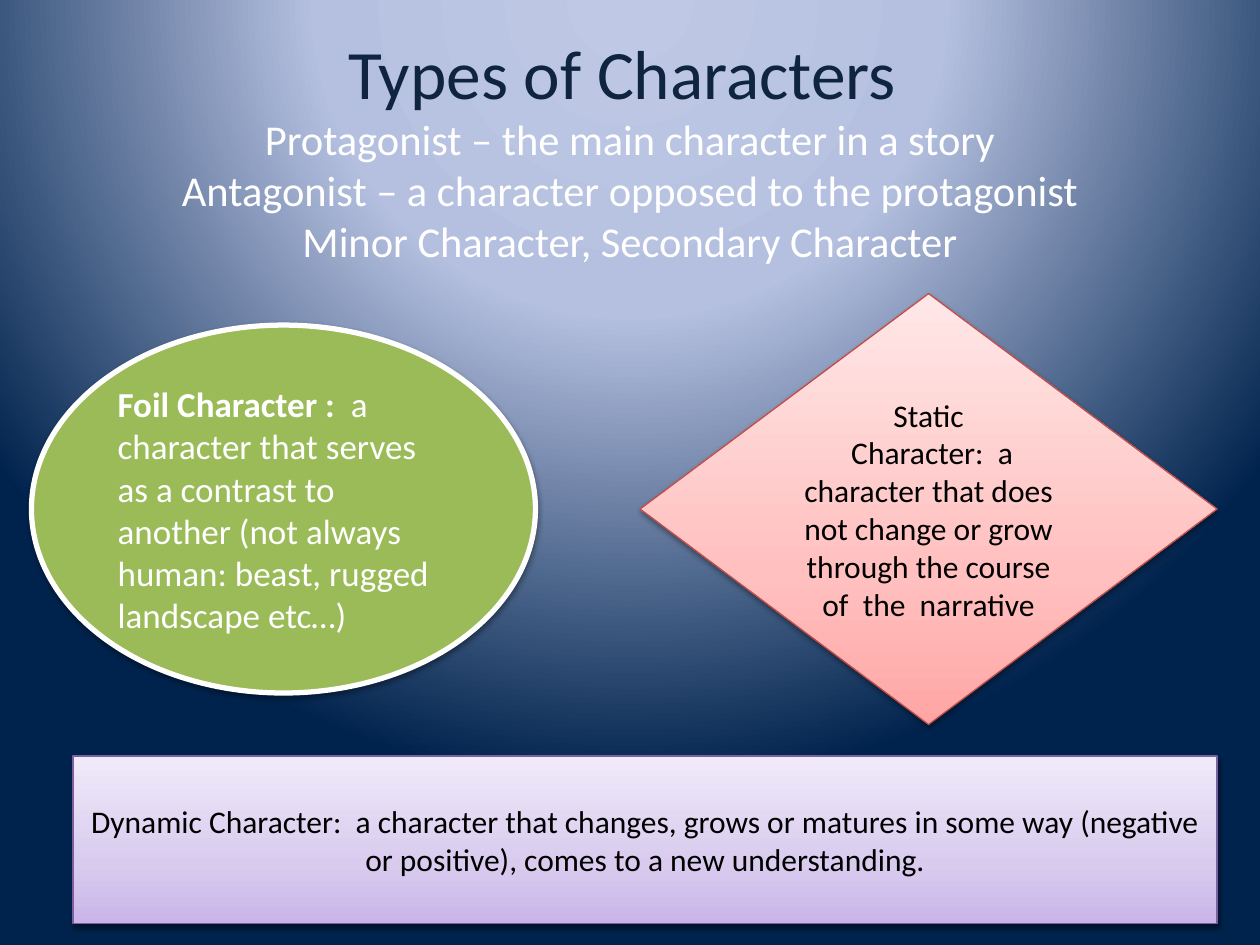
"""Build the slide on types of characters."""
from dataclasses import dataclass
from typing import NamedTuple

from pptx import Presentation
from pptx.dml.color import RGBColor as Rgb
from pptx.enum.shapes import MSO_SHAPE as Form
from pptx.enum.text import MSO_ANCHOR as Anchor, PP_ALIGN as Align
from pptx.oxml import parse_xml
from pptx.oxml.ns import nsdecls, qn
from pptx.util import Inches, Pt

Stops = tuple[tuple[int, str], ...]


@dataclass(frozen=True)
class Theme:
    """Colours and type sizes of the slide."""
    font: str = "Calibri"
    white: str = "FFFFFF"
    black: str = "000000"
    navy: str = "0F243E"
    green: str = "9BBB59"
    plum: str = "7D60A0"
    red: str = "BF4C48"
    back: Stops = ((0, "BFC9E5"), (40, "B5C0E0"), (100, "00234D"))
    lilac: Stops = ((0, "C9B5E8"), (35, "D8CBEE"), (100, "F0EAF9"))
    rose: Stops = ((0, "FFA6A5"), (35, "FFC0BF"), (100, "FFE7E7"))
    head: float = 39.6
    sub: float = 24.3
    large: float = 20
    body: float = 18


THEME = Theme()


class Run(NamedTuple):
    """A piece of text in one format."""
    text: str
    size: float
    color: str
    bold: bool = False


Line = tuple[Run, ...]


class Card(NamedTuple):
    """A filled shape that holds text."""
    form: Form
    box: tuple[float, float, float, float]
    fill: str | Stops
    edge: str
    width: float
    align: Align
    lines: tuple[Line, ...]


TITLE = (
    (Run("Types of Characters ", THEME.head, THEME.navy),),
    *((Run(text, THEME.sub, THEME.white),) for text in (
        "Protagonist – the main character in a story",
        "Antagonist – a character opposed to the protagonist",
        "Minor Character, Secondary Character",
    )),
)

CARDS = (
    Card(Form.OVAL, (0.25, 2.58, 4, 2.92), THEME.green, THEME.white, 3, Align.LEFT, ((
        Run("Foil Character :  ", THEME.large, THEME.white, True),
        Run("a character that serves as a contrast to another "
            "(not always human: beast, rugged landscape etc…)",
            THEME.large, THEME.white),
    ),)),
    Card(Form.RECTANGLE, (0.58, 6, 9.08, 1.33), THEME.lilac, THEME.plum, 0.75, Align.CENTER, ((
        Run("Dynamic Character:  a character that changes, grows or matures in "
            "some way (negative or positive), comes to a new understanding.",
            THEME.body, THEME.black),
    ),)),
    Card(Form.DIAMOND, (5.08, 2.33, 4.58, 3.42), THEME.rose, THEME.red, 0.75, Align.CENTER, (
        (Run("Static", THEME.body, THEME.black),),
        (Run(" Character:  a character that does not change or grow through "
             "the course of  the  narrative", THEME.body, THEME.black),),
    )),
)


def blend(stops: Stops, course: str) -> str:
    """Return the XML of a gradient fill."""
    marks = "".join(f'<a:gs pos="{at * 1000}"><a:srgbClr val="{color}"/></a:gs>'
                    for at, color in stops)
    return (f'<a:gradFill {nsdecls("a")} rotWithShape="1">'
            f'<a:gsLst>{marks}</a:gsLst>{course}</a:gradFill>')


def paint_back(slide) -> None:
    """Give the slide its round gradient."""
    course = ('<a:path path="circle"><a:fillToRect l="50000" t="-80000" '
              'r="50000" b="180000"/></a:path>')
    back = parse_xml(f'<p:bg {nsdecls("p", "a")}><p:bgPr>{blend(THEME.back, course)}'
                     '<a:effectLst/></p:bgPr></p:bg>')
    slide.element.find(qn("p:cSld")).insert(0, back)


def write(frame, lines: tuple[Line, ...], align: Align, form: dict) -> None:
    """Fill a text frame with one paragraph for each line."""
    for name, value in form.items():
        setattr(frame, name, value)
    for rank, line in enumerate(lines):
        para = frame.add_paragraph() if rank else frame.paragraphs[0]
        para.alignment = align
        for part in line:
            run = para.add_run()
            run.text = part.text
            look = {"name": THEME.font, "size": Pt(part.size), "bold": part.bold}
            for name, value in look.items():
                setattr(run.font, name, value)
            run.font.color.rgb = Rgb.from_string(part.color)


def cast(shape) -> None:
    """Drop a soft shadow below the shape."""
    shape.shadow.inherit = False
    shade = (f'<a:outerShdw {nsdecls("a")} blurRad="{Pt(3.1)}" dist="{Pt(1.6)}" '
             f'dir="5400000" rotWithShape="0"><a:srgbClr val="{THEME.black}">'
             '<a:alpha val="38000"/></a:srgbClr></a:outerShdw>')
    shape.element.spPr.find(qn("a:effectLst")).append(parse_xml(shade))


def draw(slide, card: Card) -> None:
    """Add one card to the slide."""
    shape = slide.shapes.add_shape(card.form, *map(Inches, card.box))
    if isinstance(card.fill, str):
        shape.fill.solid()
        shape.fill.fore_color.rgb = Rgb.from_string(card.fill)
    else:
        course = '<a:lin ang="16200000" scaled="0"/>'
        geom = shape.element.spPr.find(qn("a:prstGeom"))
        geom.addnext(parse_xml(blend(card.fill, course)))
    shape.line.color.rgb = Rgb.from_string(card.edge)
    shape.line.width = Pt(card.width)
    cast(shape)
    write(shape.text_frame, card.lines, card.align,
          {"word_wrap": True, "vertical_anchor": Anchor.MIDDLE})


def main() -> None:
    """Build and save the deck."""
    deck = Presentation()
    deck.slide_width, deck.slide_height = Inches(10), Inches(7.5)
    slide = deck.slides.add_slide(deck.slide_layouts[6])
    paint_back(slide)
    title = slide.shapes.add_textbox(*map(Inches, (0.5, 0, 9, 2.08)))
    write(title.text_frame, TITLE, Align.CENTER,
          {"word_wrap": True, "vertical_anchor": Anchor.TOP, "margin_top": Inches(0.24)})
    for card in CARDS:
        draw(slide, card)
    deck.save("out.pptx")


if __name__ == "__main__":
    main()
